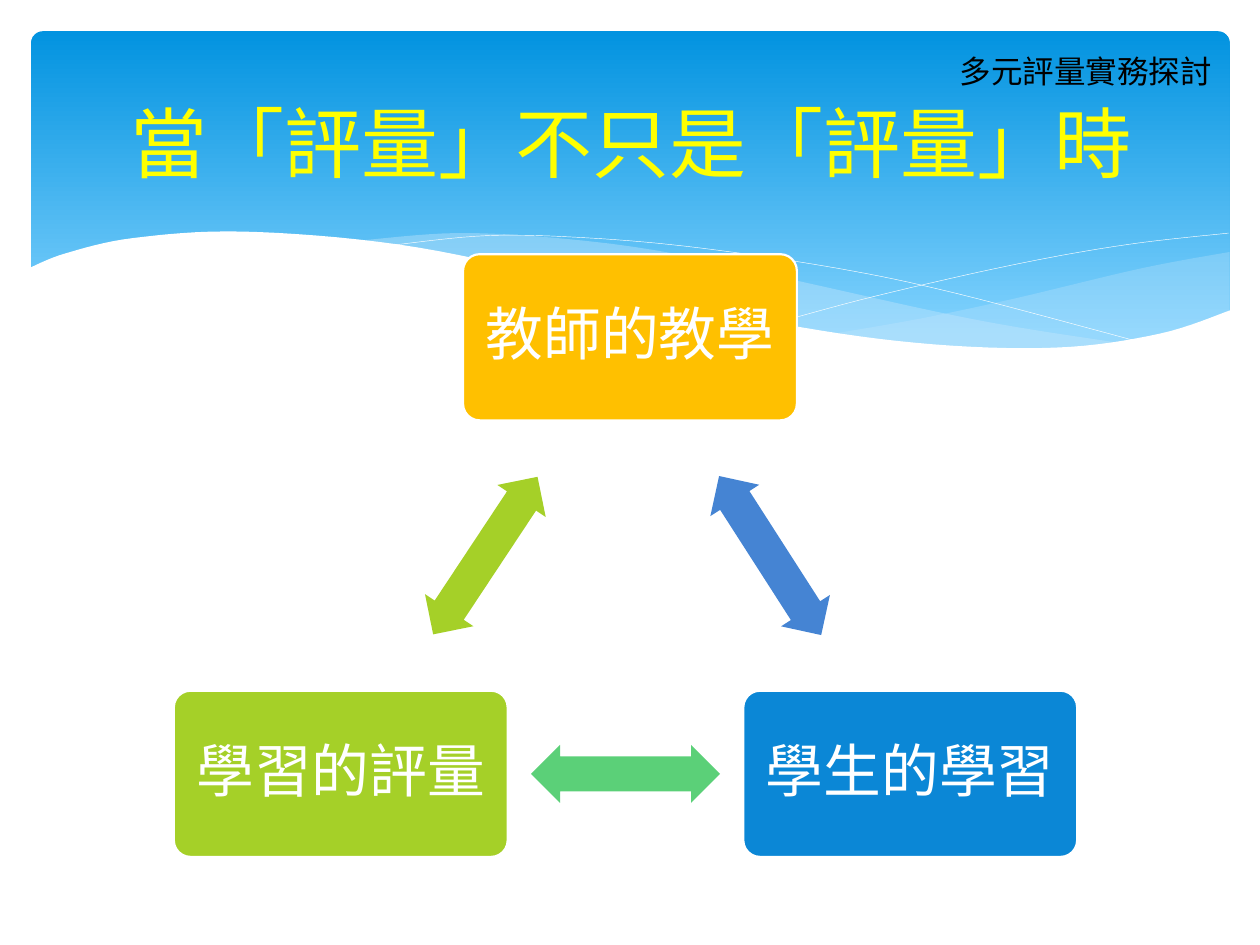
from math import atan2, degrees

from lxml.etree import SubElement
from pptx import Presentation
from pptx.dml.color import RGBColor
from pptx.enum.shapes import MSO_SHAPE as Kind
from pptx.enum.text import MSO_ANCHOR as Anchor, PP_ALIGN as Align
from pptx.oxml.ns import qn
from pptx.util import Cm, Pt

FONT = "Calibri"
WHITE, BLACK, YELLOW, PALE = "FFFFFF", "000000", "FFFF00", "C6E7FC"
BAND = [(0, "0293E0"), (0.9, "83D3FE")]

BOX = (6.73, 3.35)
ARROW = (3.81, 1.17)
BOXES = [
    ("教師的教學", (12.7, 6.8), "FFC000"),
    ("學生的學習", (18.35, 15.6), "0B87D6"),
    ("學習的評量", (6.87, 15.6), "A5D028"),
]
ARROWS = ["4584D3", "5BD078", "A5D028"]

RIGHT_TOP = [(24.79, 5.08), (23.01, 5.41), (20.45, 6.02), (18.52, 6.43), (16.79, 6.73)]
RIGHT_LOW = [(16.79, 6.73), (18.26, 6.91), (20.4, 7.06), (22.38, 6.93),
             (23.75, 6.65), (24.79, 6.27)]
MID_TOP = [(22.68, 6.93), (19.69, 6.45), (15.98, 5.64), (13.41, 5.08),
           (11.23, 4.8), (9.17, 4.7), (7.26, 4.85)]
MID_LOW = [(7.26, 4.85), (9.73, 5.26), (13.46, 6.1), (16.51, 6.71),
           (19, 7.01), (21.03, 7.06), (22.68, 6.93)]
FALL = [(7.85, 4.95), (9.83, 4.75), (11.91, 4.8), (14.12, 5),
        (16.89, 5.41), (19.3, 5.92), (23.04, 6.91)]
RISE = [(15.57, 6.53), (17.65, 5.97), (20.47, 5.33), (22.73, 4.93), (24.77, 4.7)]
EDGE = [(24.82, 6.25), (23.37, 6.73), (21.26, 7.01), (18.44, 6.91),
        (15.32, 6.45), (11.35, 5.59), (8.03, 4.93), (4.9, 4.67),
        (2.69, 4.8), (1.32, 5.11), (0.58, 5.41)]
FLOOR = [(0.58, 8.36), (24.82, 8.36)]


def tint(text):
    """Return the colour for a hex string."""
    return RGBColor.from_string(text)


def paint(shape, color):
    """Give a shape a solid fill."""
    shape.fill.solid()
    shape.fill.fore_color.rgb = tint(color)


def stroke(shape, width):
    """Give a shape a white outline."""
    shape.line.color.rgb = tint(WHITE)
    shape.line.width = Pt(width)


def write(frame, text, size, color, align=Align.CENTER):
    """Set and format one line of text."""
    frame.text = text
    par = frame.paragraphs[0]
    par.alignment = align
    font = par.runs[0].font
    font.name, font.size = FONT, Pt(size)
    font.color.rgb = tint(color)


def place(slide, kind, mid, size, adjs):
    """Add a preset shape centred on a point, without shadow or line."""
    spot = [m - s / 2 for m, s in zip(mid, size)]
    shape = slide.shapes.add_shape(kind, *map(Cm, spot), *map(Cm, size))
    shape.shadow.inherit = False
    shape.line.fill.background()
    for i, adj in enumerate(adjs):
        shape.adjustments[i] = adj
    return shape


def blend(a, b, c, d, t):
    """Return the Catmull-Rom value between b and c at t."""
    return b + t / 2 * (c - a + t * (2 * a - 5 * b + 4 * c - d + t * (3 * (b - c) + d - a)))


def smooth(knots, steps=8):
    """Return the points of a smooth curve through the knots."""
    ends = [knots[0], *knots, knots[-1]]
    pts = [tuple(blend(*axis, i / steps) for axis in zip(*ends[k:k + 4]))
           for k in range(len(knots) - 1) for i in range(steps)]
    return pts + [knots[-1]]


def trace(slide, pts, close):
    """Add a freeform through points given in centimetres."""
    start, *rest = [(Cm(x), Cm(y)) for x, y in pts]
    pen = slide.shapes.build_freeform(*start, scale=1.0)
    pen.add_line_segments(rest, close=close)
    shape = pen.convert_to_shape()
    shape.shadow.inherit = False
    return shape


def wave(slide, pts, color, alpha=100):
    """Add a filled wave with the given opacity in percent."""
    shape = trace(slide, pts, True)
    shape.line.fill.background()
    paint(shape, color)
    if alpha < 100:
        node = shape._element.spPr.find(qn("a:solidFill"))[0]
        SubElement(node, qn("a:alpha"), val=str(alpha * 1000))


def curve(slide, knots):
    """Add a thin white curve."""
    shape = trace(slide, smooth(knots), False)
    shape.fill.background()
    stroke(shape, 0.25)


def band(slide):
    """Add the blue gradient band at the top."""
    shape = place(slide, Kind.ROUNDED_RECTANGLE, (12.71, 4.06), (24.16, 6.86), [0.034])
    shape.fill.gradient()
    shape.fill.gradient_angle = 270
    for stop, (pos, color) in zip(shape.fill.gradient_stops, BAND):
        stop.position, stop.color.rgb = pos, tint(color)


def scene(slide):
    """Add the band with its waves and curves."""
    band(slide)
    wave(slide, smooth(RIGHT_TOP) + smooth(RIGHT_LOW), PALE, 29)
    wave(slide, smooth(MID_TOP) + smooth(MID_LOW), PALE, 40)
    for knots in (FALL, RISE):
        curve(slide, knots)
    wave(slide, smooth(EDGE) + FLOOR, WHITE)


def box(slide, text, mid, color):
    """Add a rounded box with its text."""
    shape = place(slide, Kind.ROUNDED_RECTANGLE, mid, BOX, [0.1])
    paint(shape, color)
    stroke(shape, 1.25)
    frame = shape.text_frame
    frame.word_wrap = True
    frame.margin_left = frame.margin_right = Cm(0.3)
    frame.vertical_anchor = Anchor.MIDDLE
    write(frame, text, 33, WHITE)
    frame.paragraphs[0].line_spacing = 0.9


def arrow(slide, tail, tip, color):
    """Add a double arrow halfway between two points, along their line."""
    (x1, y1), (x2, y2) = tail, tip
    mid = ((x1 + x2) / 2, (y1 + y2) / 2)
    shape = place(slide, Kind.LEFT_RIGHT_ARROW, mid, ARROW, [0.6, 0.5])
    shape.rotation = degrees(atan2(y2 - y1, x2 - x1))
    paint(shape, color)


def cycle(slide):
    """Add the boxes, each with an arrow to the next."""
    mids = [mid for _, mid, _ in BOXES]
    tips = mids[1:] + mids[:1]
    for item, tip, color in zip(BOXES, tips, ARROWS):
        box(slide, *item)
        arrow(slide, item[1], tip, color)


def label(slide, text):
    """Add the topic label at the top right."""
    area = map(Cm, (19.1, 0.93, 5.64, 1.02))
    frame = slide.shapes.add_textbox(*area).text_frame
    frame.word_wrap = False
    write(frame, text, 18, BLACK, Align.LEFT)


def head(slide, text):
    """Format the title and bring it to the front."""
    title = slide.shapes.title
    title.left, title.top, title.width, title.height = map(Cm, (1.3, 1.12, 22.86, 3.48))
    title.text_frame.vertical_anchor = Anchor.MIDDLE
    write(title.text_frame, text, 44, YELLOW)
    slide.shapes._spTree.append(title._element)


def main():
    """Build and save the slide."""
    prs = Presentation()
    prs.slide_width, prs.slide_height = Cm(25.4), Cm(19.05)
    slide = prs.slides.add_slide(prs.slide_layouts[5])
    scene(slide)
    label(slide, "多元評量實務探討")
    cycle(slide)
    head(slide, "當「評量」不只是「評量」時")
    prs.save("out.pptx")


if __name__ == "__main__":
    main()
